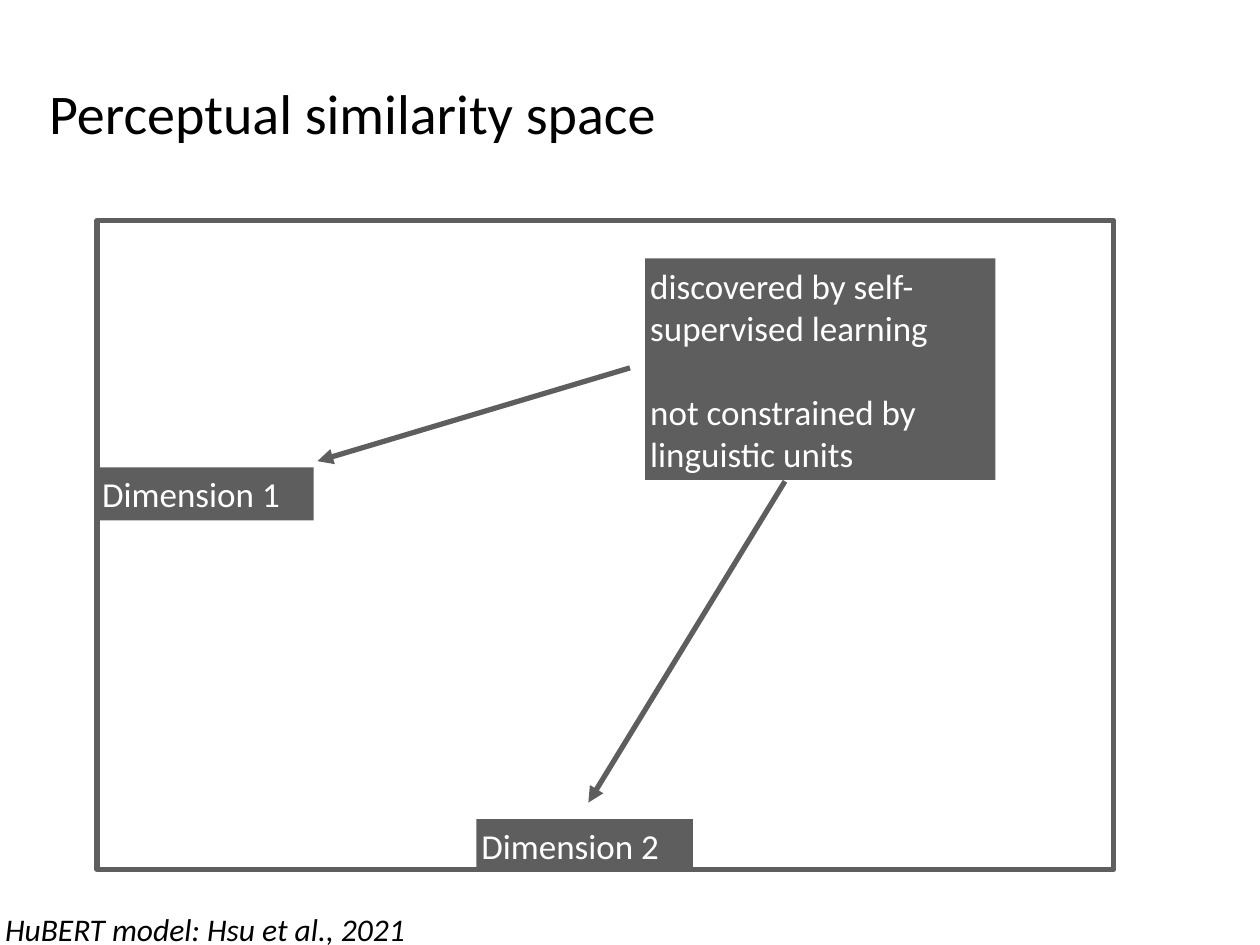
from dataclasses import dataclass

from lxml import etree
from pptx import Presentation
from pptx import util as u
from pptx.dml.color import RGBColor
from pptx.enum import shapes, text
from pptx.oxml import ns


@dataclass(frozen=True)
class Theme:
    font: str = "Calibri"
    gray: RGBColor = RGBColor(0x5E, 0x5E, 0x5E)
    white: RGBColor = RGBColor(0xFF, 0xFF, 0xFF)
    black: RGBColor = RGBColor(0, 0, 0)
    title_size: int = 32
    label_size: int = 20
    source_size: int = 18
    line_width: float = 3
    inset: float = 0.04


@dataclass(frozen=True)
class Box:
    left: float
    top: float
    width: float
    height: float

    def lengths(self) -> list[u.Length]:
        return [u.Inches(v) for v in (self.left, self.top, self.width, self.height)]


@dataclass(frozen=True)
class Label:
    box: Box
    paragraphs: tuple[str, ...]


@dataclass(frozen=True)
class Arrow:
    start: tuple[float, float]
    end: tuple[float, float]


THEME = Theme()
SPACE = Box(0.77, 1.75, 8.07, 5.15)
LABELS = (
    Label(Box(3.78, 6.5, 1.72, 0.42), ("Dimension 2",)),
    Label(Box(SPACE.left, 3.71, 1.72, 0.42), ("Dimension 1",)),
    Label(Box(5.12, 2.05, 2.78, 1.76),
          ("discovered by self-supervised learning",
           "not constrained by linguistic units")),
)
ARROWS = (
    Arrow((5, 2.92), (2.52, 3.66)),
    Arrow((6.23, 3.82), (4.67, 6.37)),
)


def write(frame, paragraphs: tuple[str, ...], size: int, color: RGBColor,
          italic: bool = False, wrap: bool = True) -> None:
    """Fill a text frame with left-aligned, vertically centred paragraphs."""
    frame.text = "\n".join(paragraphs)
    frame.word_wrap = wrap
    frame.auto_size = text.MSO_AUTO_SIZE.NONE
    frame.vertical_anchor = text.MSO_ANCHOR.MIDDLE
    frame.margin_left = frame.margin_right = u.Inches(THEME.inset)
    frame.margin_top = frame.margin_bottom = u.Inches(THEME.inset)
    for index, paragraph in enumerate(frame.paragraphs):
        paragraph.alignment = text.PP_ALIGN.LEFT
        # One line of space between paragraphs
        paragraph.space_before = u.Pt(size * 1.2 if index else 0)
        paragraph.font.name = THEME.font
        paragraph.font.size = u.Pt(size)
        paragraph.font.color.rgb = color
        paragraph.font.italic = italic


def add_title(slide, box: Box, wording: str) -> None:
    title = slide.shapes.title
    title.left, title.top, title.width, title.height = box.lengths()
    write(title.text_frame, (wording,), THEME.title_size, THEME.black)


def add_frame(slide, box: Box) -> None:
    frame = slide.shapes.add_shape(shapes.MSO_SHAPE.RECTANGLE, *box.lengths())
    frame.shadow.inherit = False
    frame.fill.background()
    frame.line.color.rgb = THEME.gray
    frame.line.width = u.Pt(THEME.line_width)


def add_label(slide, label: Label) -> None:
    panel = slide.shapes.add_shape(shapes.MSO_SHAPE.RECTANGLE, *label.box.lengths())
    panel.shadow.inherit = False
    panel.fill.solid()
    panel.fill.fore_color.rgb = THEME.gray
    panel.line.fill.background()
    write(panel.text_frame, label.paragraphs, THEME.label_size, THEME.white)


def add_arrow(slide, arrow: Arrow) -> None:
    ends = [u.Inches(v) for v in (*arrow.start, *arrow.end)]
    line = slide.shapes.add_connector(shapes.MSO_CONNECTOR.STRAIGHT, *ends)
    line.line.color.rgb = THEME.gray
    line.line.width = u.Pt(THEME.line_width)
    # Arrowhead at the end, and no shadow
    outline = line.line._get_or_add_ln()
    etree.SubElement(outline, ns.qn("a:tailEnd"), type="triangle")
    etree.SubElement(line._element.spPr, ns.qn("a:effectLst"))


def add_source(slide, box: Box, wording: str) -> None:
    source = slide.shapes.add_textbox(*box.lengths())
    write(source.text_frame, (wording,), THEME.source_size, THEME.black,
          italic=True, wrap=False)


def main() -> None:
    deck = Presentation()
    deck.slide_width, deck.slide_height = u.Inches(10), u.Inches(7.5)
    title_only = deck.slide_layouts[5]
    slide = deck.slides.add_slide(title_only)

    # Similarity space with its dimensions and their origin
    add_frame(slide, SPACE)
    for label in LABELS:
        add_label(slide, label)
    for arrow in ARROWS:
        add_arrow(slide, arrow)

    # Title and source
    add_title(slide, Box(0.35, 0.34, 8.9, 1.1), "Perceptual similarity space")
    add_source(slide, Box(0, 7.18, 3.29, 0.38), "HuBERT model: Hsu et al., 2021")

    deck.save("out.pptx")


if __name__ == "__main__":
    main()
